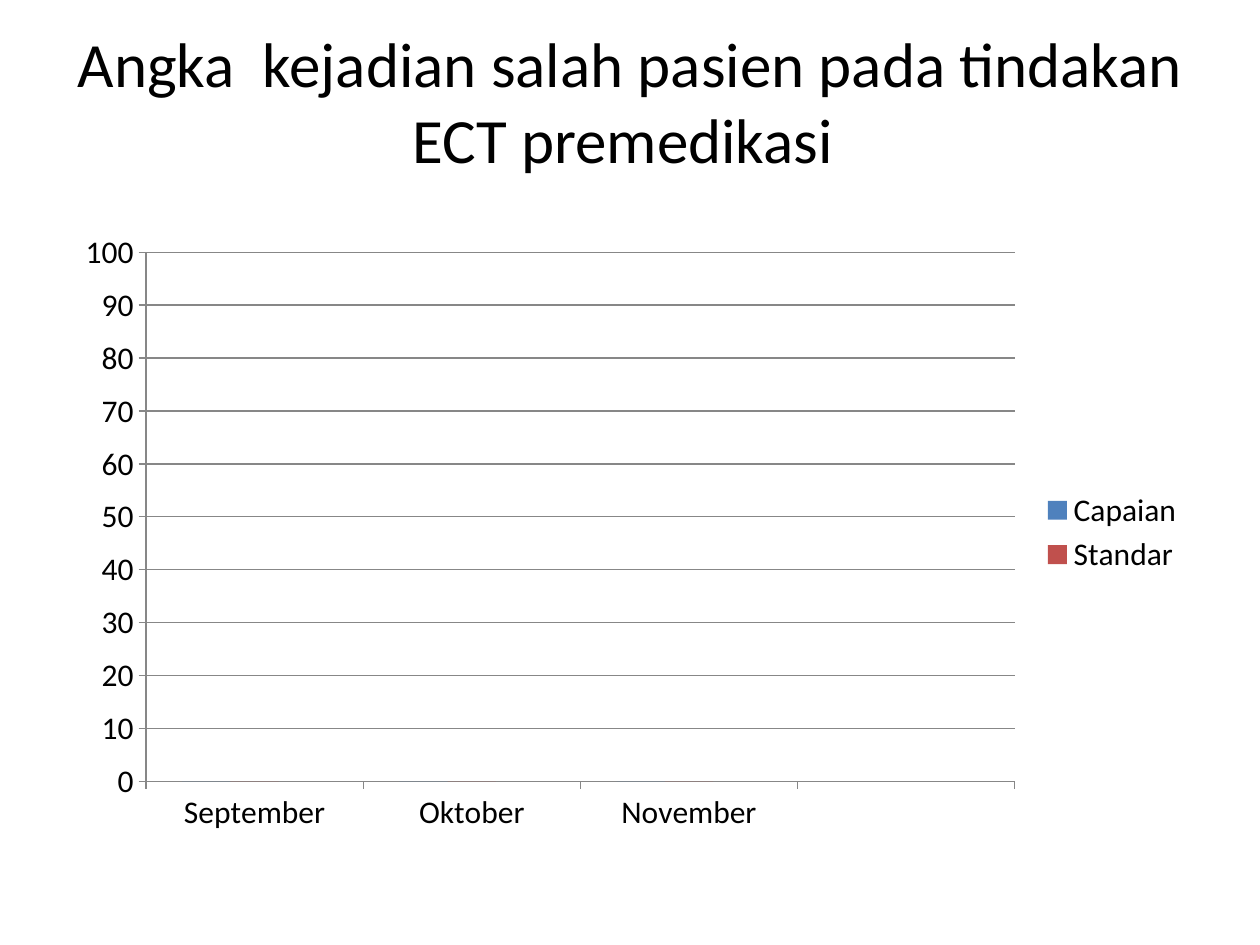
from lxml import etree
from pptx import Presentation
from pptx.chart.data import CategoryChartData
from pptx.dml.color import RGBColor
from pptx.enum.chart import XL_CHART_TYPE as ChartType
from pptx.enum.chart import XL_LEGEND_POSITION as LegendPosition
from pptx.enum.chart import XL_TICK_MARK as TickMark
from pptx.enum.text import MSO_ANCHOR as Anchor
from pptx.enum.text import PP_ALIGN as Align
from pptx.oxml.ns import qn
from pptx.util import Cm, Pt

BLACK = RGBColor(0x00, 0x00, 0x00)
GRAY = RGBColor(0x87, 0x87, 0x87)
BLUE = RGBColor(0x4F, 0x81, 0xBD)
RED = RGBColor(0xC0, 0x50, 0x4D)
GREEN = RGBColor(0x9B, 0xBB, 0x59)
FONT = "Calibri"
TITLE_ONLY = 5

presentation = Presentation()
presentation.slide_width = Cm(25.4)
presentation.slide_height = Cm(19.05)
slide = presentation.slides.add_slide(presentation.slide_layouts[TITLE_ONLY])

# Title, ending in a line break
title = slide.shapes.title
title.left, title.top, title.width, title.height = Cm(1.27), Cm(1.27), Cm(22.86), Cm(3.18)
title.text_frame.text = "Angka  kejadian salah pasien pada tindakan ECT premedikasi \v"
title.text_frame.vertical_anchor = Anchor.MIDDLE
title.text_frame.margin_bottom = Cm(0.28)
paragraph = title.text_frame.paragraphs[0]
paragraph.alignment = Align.CENTER
for font in (paragraph.font, paragraph.runs[0].font):
    font.name = FONT
    font.size = Pt(36)
    font.color.rgb = BLACK

# Column chart: the fourth category and the third series are still unfilled
chart_data = CategoryChartData()
chart_data.categories = ["September", "Oktober", "November", ""]
chart_data.add_series("Capaian", (0, 0, 0, None))
chart_data.add_series("Standar", (0, 0, 0, None))
chart_data.add_series("Series 3", (None, None, None, None))

chart = slide.shapes.add_chart(
    ChartType.COLUMN_CLUSTERED, Cm(1.27), Cm(4.45), Cm(22.86), Cm(12.57), chart_data
).chart
chart.has_title = False
chart.font.name = FONT
chart.font.size = Pt(18)
chart.font.color.rgb = BLACK

# The legend leaves out the unfilled series
chart.has_legend = True
legend = chart.legend
legend.position = LegendPosition.RIGHT
legend.include_in_layout = False
legend_entry = etree.Element(qn("c:legendEntry"))
etree.SubElement(legend_entry, qn("c:idx")).set("val", "2")
etree.SubElement(legend_entry, qn("c:delete")).set("val", "1")
legend._element.find(qn("c:legendPos")).addnext(legend_entry)

plot = chart.plots[0]
plot.gap_width = 150
plot.vary_by_categories = False
for series, color in zip(plot.series, (BLUE, RED, GREEN)):
    series.format.fill.solid()
    series.format.fill.fore_color.rgb = color

value_axis = chart.value_axis
value_axis.maximum_scale = 100
value_axis.major_unit = 10
value_axis.has_major_gridlines = True
for axis in (chart.category_axis, value_axis):
    axis.major_tick_mark = TickMark.OUTSIDE
for lined in (chart.category_axis, value_axis, value_axis.major_gridlines):
    lined.format.line.color.rgb = GRAY
    lined.format.line.width = Pt(0.75)

presentation.save("out.pptx")
